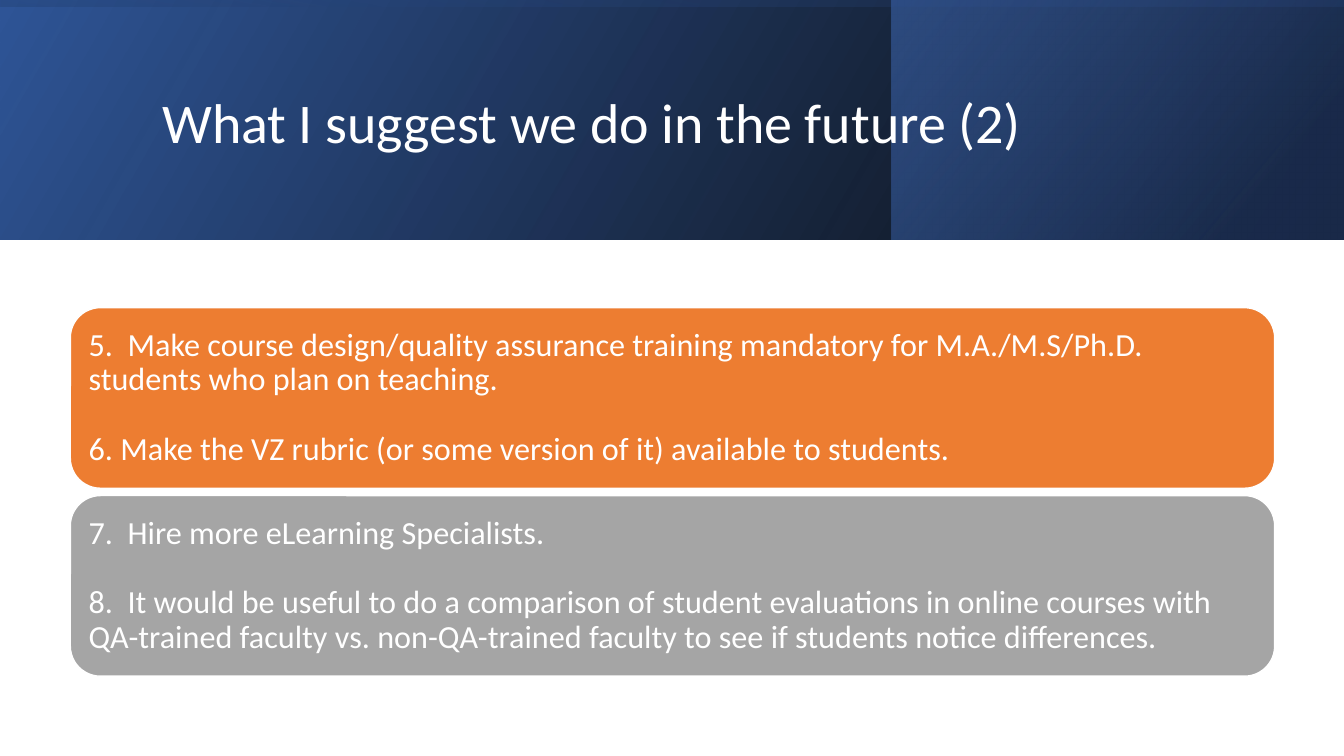
"""Build a slide of future suggestions under a layered gradient banner."""
from lxml import etree
from pptx import Presentation
from pptx import util as u
from pptx.dml.color import RGBColor
from pptx.enum import shapes, text
from pptx.oxml import ns

PX = 9525
PAGE_W, PAGE_H = 1280, 720
BANNER_H = 228
SIDE_X = 849
CARD_X, CARD_Y, CARD_W, CARD_H, CARD_STEP = 67, 293, 1147, 172, 179
CARD_INSET = 9
FONT = "Calibri"

WHITE = RGBColor(0xFF, 0xFF, 0xFF)
BLACK = RGBColor(0x00, 0x00, 0x00)
BLUE = RGBColor(0x2F, 0x55, 0x97)
NAVY = RGBColor(0x20, 0x38, 0x64)
BRIGHT_BLUE = RGBColor(0x44, 0x72, 0xC4)
ORANGE = RGBColor(0xED, 0x7D, 0x31)
GRAY = RGBColor(0xA5, 0xA5, 0xA5)

TITLE = "What I suggest we do in the future (2)"
CARDS = [
    (ORANGE, [
        "5.  Make course design/quality assurance training mandatory for "
        "M.A./M.S/Ph.D. students who plan on teaching.",
        "6. Make the VZ rubric (or some version of it) available to students.",
    ]),
    (GRAY, [
        "7.  Hire more eLearning Specialists.",
        "8.  It would be useful to do a comparison of student evaluations in "
        "online courses with QA-trained faculty vs. non-QA-trained faculty to "
        "see if students notice differences.",
    ]),
]


def px(*lengths):
    """Turn px lengths into EMU."""
    return [u.Emu(length * PX) for length in lengths]


def add_band(page, box, stops, angle, rotation=0):
    """Add a mirrored rectangle with a see-through two-stop gradient."""
    band = page.shapes.add_shape(shapes.MSO_SHAPE.RECTANGLE, *px(*box))
    band.shadow.inherit = False
    band.rotation = rotation
    band._element.spPr.get_or_add_xfrm().set("flipH", "1")
    band.line.fill.background()
    band.fill.gradient()
    band.fill.gradient_angle = angle
    for stop, (position, color, _) in zip(band.fill.gradient_stops, stops):
        stop.position = position / 100
        stop.color.rgb = color
    colors = band._element.spPr.iter(ns.qn("a:srgbClr"))
    for color, (_, _, opacity) in zip(colors, stops):
        alpha = etree.SubElement(color, ns.qn("a:alpha"))
        alpha.set("val", str(opacity * 1000))


def add_text(para, words, size):
    """Write one left-aligned white run into a paragraph."""
    para.alignment = text.PP_ALIGN.LEFT
    para.line_spacing = 0.9
    span = para.add_run()
    span.text = words
    span.font.name = FONT
    span.font.size = u.Pt(size)
    span.font.color.rgb = WHITE


def place_title(page, box):
    """Place the title in front of the banner."""
    title = page.shapes.title
    page.shapes._spTree.append(title._element)
    title.left, title.top, title.width, title.height = px(*box)
    frame = title.text_frame
    frame.word_wrap = True
    frame.auto_size = text.MSO_AUTO_SIZE.NONE
    frame.vertical_anchor = text.MSO_ANCHOR.MIDDLE
    add_text(frame.paragraphs[0], TITLE, 40)


def add_card(page, box, color, suggestions):
    """Add a rounded card holding a few suggestions."""
    card = page.shapes.add_shape(shapes.MSO_SHAPE.ROUNDED_RECTANGLE, *px(*box))
    card.shadow.inherit = False
    card.fill.solid()
    card.fill.fore_color.rgb = color
    card.line.color.rgb = WHITE
    card.line.width = u.Pt(1)
    frame = card.text_frame
    frame.word_wrap = True
    frame.vertical_anchor = text.MSO_ANCHOR.MIDDLE
    (frame.margin_left, frame.margin_top,
     frame.margin_right, frame.margin_bottom) = px(*[CARD_INSET] * 4)
    for index, words in enumerate(suggestions):
        para = frame.add_paragraph() if index else frame.paragraphs[0]
        para.space_before = u.Pt(25 if index else 0)
        add_text(para, words, 23)


def main():
    """Build and save the deck."""
    deck = Presentation()
    deck.slide_width, deck.slide_height = px(PAGE_W, PAGE_H)
    page = deck.slides.add_slide(deck.slide_layouts.get_by_name("Title Only"))
    add_band(page, (0, 0, PAGE_W, BANNER_H),
             [(0, BLACK, 96), (100, BLUE, 100)], 30)
    add_band(page, (SIDE_X, 0, PAGE_W - SIDE_X, BANNER_H),
             [(19, NAVY, 68), (100, BRIGHT_BLUE, 48)], 40)
    shift = (PAGE_W - BANNER_H) // 2
    add_band(page, (shift, -shift, BANNER_H, PAGE_W),
             [(23, BLUE, 16), (99, BLACK, 45)], 10, rotation=270)
    place_title(page, (145, 37, 1020, 165))
    for index, (color, suggestions) in enumerate(CARDS):
        top = CARD_Y + index * CARD_STEP
        add_card(page, (CARD_X, top, CARD_W, CARD_H), color, suggestions)
    deck.save("out.pptx")


if __name__ == "__main__":
    main()
